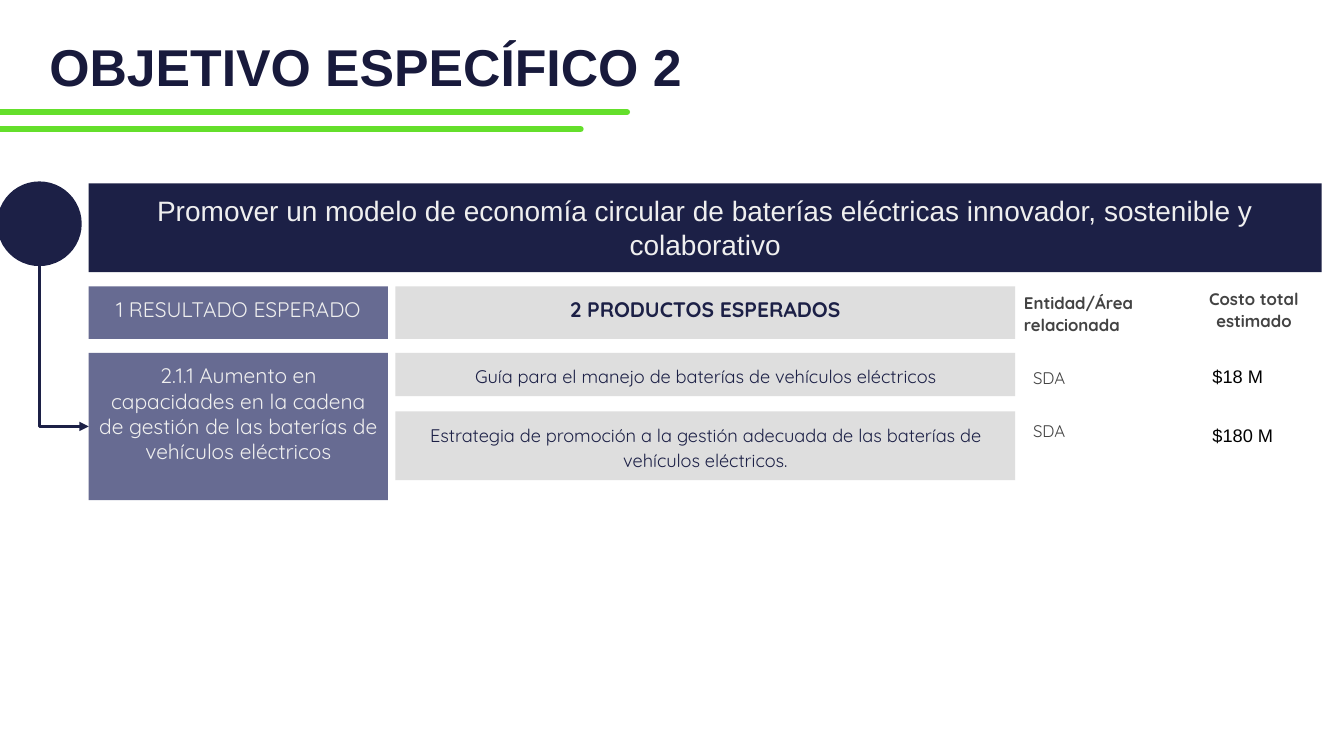
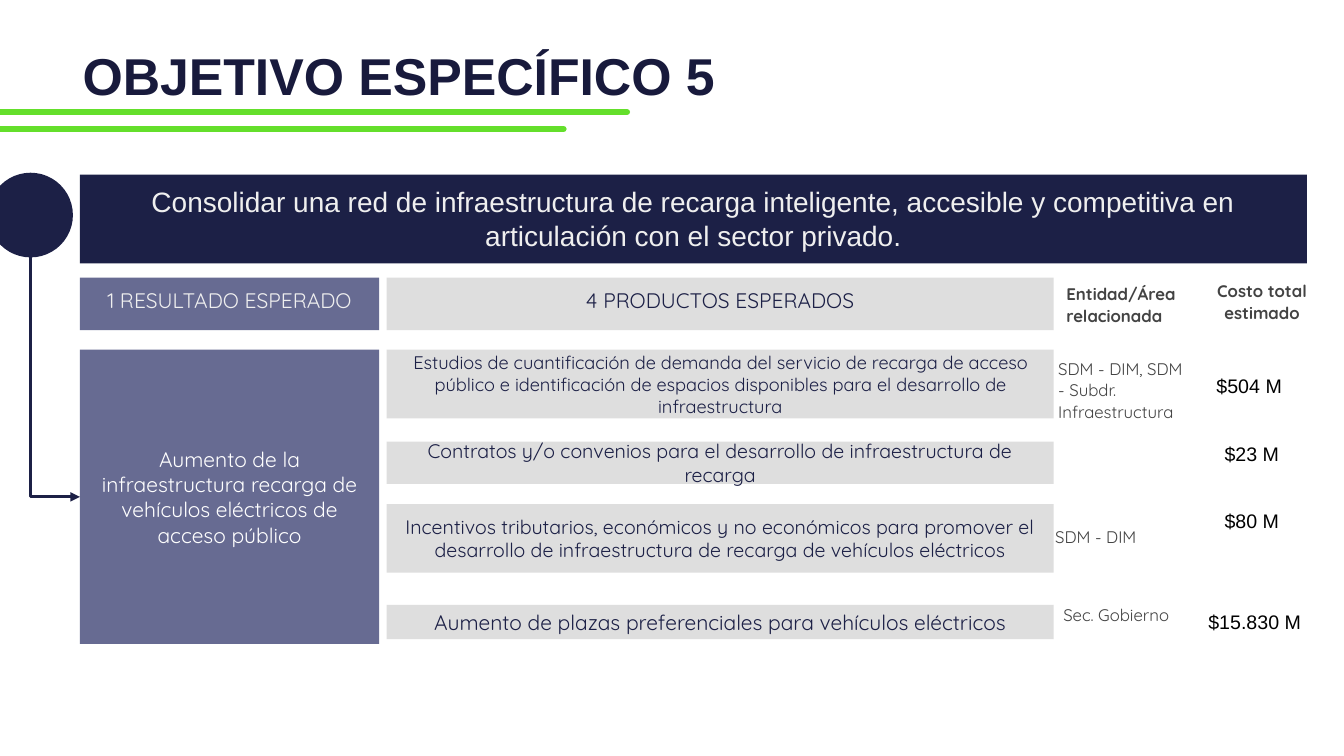
"""Build two slides on the specific goals of an electric battery plan."""
from dataclasses import dataclass

from pptx import Presentation
from pptx.dml.color import RGBColor
from pptx.enum.shapes import MSO_CONNECTOR as Link, MSO_SHAPE as Form
from pptx.enum.text import MSO_ANCHOR as Anchor, MSO_AUTO_SIZE as Fit, PP_ALIGN as Align
from pptx.oxml.ns import qn
from pptx.oxml.xmlchemy import OxmlElement as Node
from pptx.util import Pt

NAVY = RGBColor(0x1C, 0x20, 0x46)
INK = RGBColor(0x18, 0x1A, 0x3C)
SLATE = RGBColor(0x67, 0x6B, 0x92)
SILVER = RGBColor(0xCC, 0xCC, 0xCC)
GREEN = RGBColor(0x64, 0xDF, 0x2B)
PALE = RGBColor(0xEF, 0xEF, 0xEF)
WHITE = RGBColor(0xFF, 0xFF, 0xFF)
GRAY = RGBColor(0x43, 0x43, 0x43)
BLACK = RGBColor(0, 0, 0)

SANS, SOFT = "Arial", "Quicksand"
HEAD_H, SIDE_W, MAIN_X, DISC = 37.5, 213.8, 219, 60.5


@dataclass(frozen=True)
class Style:
    """Look of one text."""
    size: float
    color: RGBColor
    face: str = SOFT
    bold: bool = False
    align: Align = Align.CENTER
    anchor: Anchor = Anchor.TOP
    space: float = 1.0
    inset: float = 7.2


@dataclass(frozen=True)
class Bar:
    """Gray bar with one product."""
    top: float
    high: float
    size: float
    text: str


@dataclass(frozen=True)
class Note:
    """Free text in the columns at the right."""
    left: float
    top: float
    wide: float
    high: float
    text: str


@dataclass(frozen=True)
class Goal:
    """Content and measures of one slide."""
    title: str
    spot: tuple[float, float]
    rule: tuple[float, float]
    left: float
    top: float
    wide: float
    aim: str
    side: Bar
    tint: RGBColor
    hold: Anchor
    head: str
    bold: bool
    main: float
    space: float
    bars: tuple[Bar, ...]
    caps: tuple[Note, ...]
    units: tuple[Note, ...]
    cash: float
    costs: tuple[Note, ...]


TITLE = Style(37, INK, SANS, True, Align.LEFT, Anchor.MIDDLE, 0.7, 3.6)
AIM = Style(20, PALE, SANS)
LABEL = Style(15, PALE)
UNIT = Style(12, GRAY, align=Align.LEFT, space=1.08, inset=3.6)
CAPS = (Style(12, GRAY, bold=True, align=Align.LEFT, space=1.08, inset=3.6),
        Style(12, GRAY, bold=True, space=1.08, inset=3.6))

GOALS = (
    Goal("OBJETIVO ESPECÍFICO 2", (28.1, 20.2), (-5.8, 414.7), 63.4, 131, 880.6,
         "Promover un modelo de economía circular de baterías eléctricas innovador, "
         "sostenible y colaborativo",
         Bar(252, 105.2, 15, "2.1.1 Aumento en capacidades en la cadena de gestión de "
             "las baterías de vehículos eléctricos"),
         PALE, Anchor.TOP, "2 PRODUCTOS ESPERADOS", True, 442.8, 1.15,
         (Bar(252, 31, 13, "Guía para el manejo de baterías de vehículos eléctricos"),
          Bar(293.9, 49, 13, "Estrategia de promoción a la gestión adecuada de las "
              "baterías de vehículos eléctricos.")),
         (Note(724.3, 204.5, 131, 37.5, "Entidad/Área relacionada"),
          Note(846.7, 201.6, 98, 37.5, "Costo total estimado")),
         (Note(730.8, 257.8, 107, 21.6, "SDA"),
          Note(730.8, 295.9, 107, 21.6, "SDA")),
         13,
         (Note(859, 253.4, 83.5, 30.2, "$18 M"),
          Note(859, 295.9, 83.5, 30.2, "$180 M"))),
    Goal("OBJETIVO ESPECÍFICO 5", (51.8, 26.6), (-18, 402.5), 57.1, 124.8, 876.4,
         "Consolidar una red de infraestructura de recarga inteligente, accesible y "
         "competitiva en articulación con el sector privado.",
         Bar(249.8, 210.2, 15, "Aumento de la infraestructura recarga de vehículos "
             "eléctricos de acceso público"),
         WHITE, Anchor.MIDDLE, "4 PRODUCTOS ESPERADOS", False, 476.6, 1.0,
         (Bar(249.8, 49, 13, "Estudios de cuantificación de demanda del servicio de "
              "recarga de acceso público e identificación de espacios disponibles "
              "para el desarrollo de infraestructura"),
          Bar(315.4, 30.2, 14, "Contratos y/o convenios para el desarrollo de "
              "infraestructura de recarga"),
          Bar(360, 49, 14, "Incentivos tributarios, económicos y no económicos para "
              "promover el desarrollo de infraestructura de recarga de vehículos "
              "eléctricos"),
          Bar(432, 24.5, 15, "Aumento de plazas preferenciales para vehículos "
              "eléctricos")),
         (Note(754.6, 198, 131, 37.5, "Entidad/Área relacionada"),
          Note(852.5, 195.8, 98, 37.5, "Costo total estimado")),
         (Note(748.8, 251.3, 107.3, 53.3, "SDM - DIM, SDM - Subdr. Infraestructura"),
          Note(746.6, 371.5, 107.3, 21.6, "SDM - DIM"),
          Note(752.4, 427, 107.3, 21.6, "Sec. Gobierno")),
         14,
         (Note(861.8, 259.9, 82, 31.7, "$504 M"),
          Note(867.6, 308.2, 82, 31.7, "$23 M"),
          Note(867.6, 356.4, 82, 31.7, "$80 M"),
          Note(856, 428.4, 102, 31.7, "$15.830 M"))),
)


def write(shape, text: str, style: Style) -> None:
    """Put styled text in a shape."""
    frame = shape.text_frame
    frame.text = text
    para = frame.paragraphs[0]
    font = para.runs[0].font
    looks = {
        frame: {"word_wrap": True, "auto_size": Fit.NONE,
                "vertical_anchor": style.anchor,
                "margin_left": Pt(7.2), "margin_right": Pt(7.2),
                "margin_top": Pt(style.inset), "margin_bottom": Pt(style.inset)},
        para: {"alignment": style.align, "line_spacing": style.space},
        font: {"size": Pt(style.size), "name": style.face, "bold": style.bold},
        font.color: {"rgb": style.color},
    }
    for item, look in looks.items():
        for key, value in look.items():
            setattr(item, key, value)


def block(slide, form: Form, area: tuple[float, ...], fill: RGBColor):
    """Add a flat filled shape; silver ones are translucent."""
    shape = slide.shapes.add_shape(form, *map(Pt, area))
    shape.shadow.inherit = False
    shape.fill.solid()
    shape.fill.fore_color.rgb = fill
    shape.line.fill.background()
    if fill == SILVER:
        alpha = Node("a:alpha")
        alpha.set("val", "64000")
        shape._element.spPr.find(qn("a:solidFill"))[0].append(alpha)
    return shape


def panel(slide, area: tuple[float, ...], fill: RGBColor, text: str,
          style: Style) -> None:
    """Add a rectangle with text."""
    write(block(slide, Form.RECTANGLE, area, fill), text, style)


def place(slide, note: Note, style: Style) -> None:
    """Add a text box."""
    area = (note.left, note.top, note.wide, note.high)
    write(slide.shapes.add_textbox(*map(Pt, area)), note.text, style)


def wire(slide, kind: Link, ends: tuple[float, ...], color: RGBColor, width: float):
    """Add a connector without shadow."""
    line = slide.shapes.add_connector(kind, *map(Pt, ends))
    line.line.color.rgb = color
    line.line.width = Pt(width)
    line._element.spPr.append(Node("a:effectLst"))
    return line


def rule(slide, start: float, end: float, top: float) -> None:
    """Add a green line with round ends."""
    line = wire(slide, Link.STRAIGHT, (start, top, end, top), GREEN, 4.5)
    line._element.spPr.find(qn("a:ln")).set("cap", "rnd")


def elbow(slide, left: float, top: float, right: float, base: float) -> None:
    """Add an arrow that runs down and then right."""
    wide, high = right - left, base - top
    x, y = (left + right - high) / 2, (top + base - wide) / 2
    line = wire(slide, Link.ELBOW, (x, y, x + high, y + wide), NAVY, 2.25)
    props = line._element.spPr
    turn = props.find(qn("a:xfrm"))
    turn.set("rot", "16200000")
    turn.set("flipH", "1")
    props.find(qn("a:prstGeom")).set("prst", "bentConnector2")
    tip = Node("a:tailEnd")
    tip.set("type", "triangle")
    props.find(qn("a:ln")).append(tip)


def build(deck, goal: Goal) -> None:
    """Draw the slide of one goal."""
    slide = deck.slides.add_slide(deck.slide_layouts[5])
    title = slide.shapes.title
    spots = (*goal.spot, 782, 64)
    for key, value in zip(("left", "top", "width", "height"), spots):
        setattr(title, key, Pt(value))
    write(title, goal.title, TITLE)
    rule(slide, -10.8, 447.8, 80)
    rule(slide, *goal.rule, 92.2)

    left, top, side = goal.left, goal.top, goal.side
    panel(slide, (left, top, goal.wide, 63.4), NAVY, goal.aim, AIM)
    x, y = left - 65.5, top - 1.4
    block(slide, Form.OVAL, (x, y, DISC, DISC), NAVY)
    panel(slide, (left, side.top, SIDE_W, side.high), SLATE, side.text,
          Style(side.size, goal.tint, anchor=goal.hold))
    elbow(slide, x + DISC / 2, y + DISC, left, side.top + side.high / 2)

    head, main = top + 73.5, left + MAIN_X
    panel(slide, (left, head, SIDE_W, HEAD_H), SLATE, "1 RESULTADO ESPERADO", LABEL)
    panel(slide, (main, head, goal.main, HEAD_H), SILVER, goal.head,
          Style(15, NAVY, bold=goal.bold))
    for bar in goal.bars:
        panel(slide, (main, bar.top, goal.main, bar.high), SILVER, bar.text,
              Style(bar.size, NAVY, anchor=Anchor.MIDDLE, space=goal.space))
    for note, style in zip(goal.caps, CAPS):
        place(slide, note, style)
    for note in goal.units:
        place(slide, note, UNIT)
    for note in goal.costs:
        place(slide, note, Style(goal.cash, BLACK, SANS, align=Align.LEFT))


def main() -> None:
    """Build and save the deck."""
    deck = Presentation()
    deck.slide_width, deck.slide_height = Pt(960), Pt(540)
    for goal in GOALS:
        build(deck, goal)
    deck.save("out.pptx")


if __name__ == "__main__":
    main()
